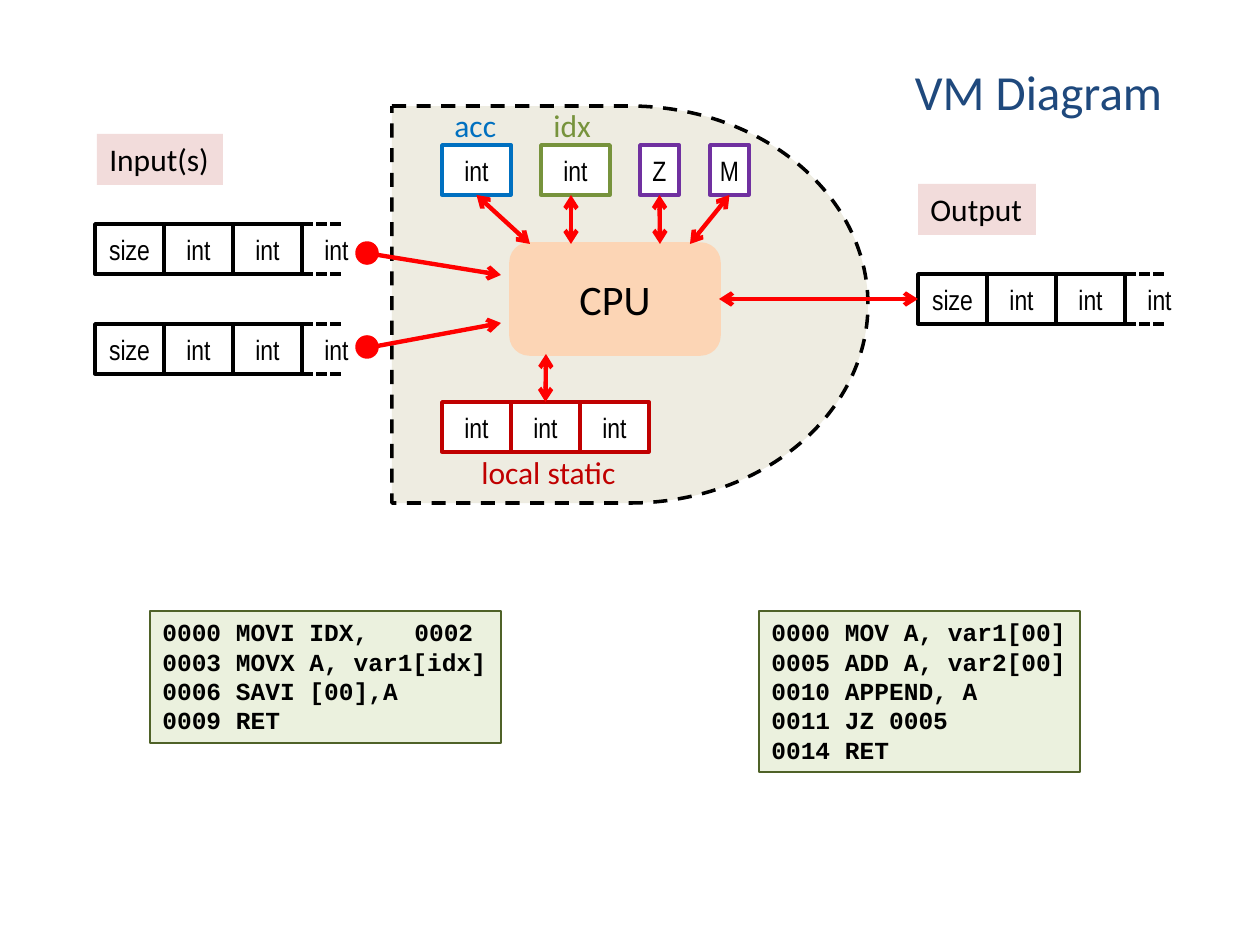
import pptx
import pptx.util
import pptx.dml.color
import pptx.enum.dml
import pptx.enum.shapes
import pptx.enum.text
import pptx.oxml
import pptx.oxml.ns

RGBColor = pptx.dml.color.RGBColor
SHAPE = pptx.enum.shapes.MSO_SHAPE
DASH = pptx.enum.dml.MSO_LINE
ALIGN = pptx.enum.text.PP_ALIGN
ANCHOR = pptx.enum.text.MSO_ANCHOR
AUTO_SIZE = pptx.enum.text.MSO_AUTO_SIZE

WHITE = RGBColor(0xFF, 0xFF, 0xFF)
BLACK = RGBColor(0x00, 0x00, 0x00)
NAVY = RGBColor(0x1F, 0x49, 0x7D)
TAN = RGBColor(0xEE, 0xEC, 0xE1)
PEACH = RGBColor(0xFC, 0xD5, 0xB5)
PINK = RGBColor(0xF2, 0xDC, 0xDB)
PALE_GREEN = RGBColor(0xEB, 0xF1, 0xDE)
DARK_GREEN = RGBColor(0x4F, 0x62, 0x28)
GREEN = RGBColor(0x77, 0x93, 0x3C)
BLUE = RGBColor(0x00, 0x70, 0xC0)
PURPLE = RGBColor(0x70, 0x30, 0xA0)
DARK_RED = RGBColor(0xC0, 0x00, 0x00)
RED = RGBColor(0xFF, 0x00, 0x00)

PX_PER_INCH = 126
CELL_W, CELL_H = 69, 50
BOTTOM, LEFT, RIGHT, TOP = 2, 1, 3, 0


def px(n):
    return pptx.util.Emu(round(n * 914400 / PX_PER_INCH))


class Diagram:
    """Style and current slide."""
    body_font, cell_font, code_font = "Calibri", "Arial Narrow", "Courier New"

    def __init__(self, slide):
        self.slide = slide

    def add_text(self, sp, lines, size, color=BLACK, font=body_font, bold=False,
                 align=ALIGN.LEFT, anchor=ANCHOR.TOP, grow=True):
        tf = sp.text_frame
        tf.word_wrap = False
        tf.auto_size = AUTO_SIZE.SHAPE_TO_FIT_TEXT if grow else AUTO_SIZE.NONE
        tf.vertical_anchor = anchor
        for i, line in enumerate(lines):
            p = tf.add_paragraph() if i else tf.paragraphs[0]
            p.alignment = align
            r = p.add_run()
            r.text = line
            r.font.name = font
            r.font.size = pptx.util.Pt(size)
            r.font.bold = bold
            r.font.color.rgb = color

    def title(self, x, y, w, h, text):
        sp = self.slide.shapes.title
        sp.left, sp.top, sp.width, sp.height = map(px, (x, y, w, h))
        self.add_text(sp, [text], 28, NAVY, align=ALIGN.CENTER)

    def shape(self, kind, x, y, w, h, fill, line=None, width=2, dash=None):
        sp = self.slide.shapes.add_shape(kind, px(x), px(y), px(w), px(h))
        sp.shadow.inherit = False
        sp.fill.solid()
        sp.fill.fore_color.rgb = fill
        if line is None:
            sp.line.fill.background()
        else:
            sp.line.color.rgb = line
            sp.line.width = pptx.util.Pt(width)
            if dash:
                sp.line.dash_style = dash
        return sp

    def cell(self, x, y, text, line=BLACK, w=CELL_W):
        sp = self.shape(SHAPE.RECTANGLE, x, y, w, CELL_H, WHITE, line)
        self.add_text(sp, [text], 16, font=self.cell_font, align=ALIGN.CENTER,
                      anchor=ANCHOR.MIDDLE, grow=False)
        return sp

    def row(self, x, y, texts, line=BLACK):
        return [self.cell(x + i * CELL_W, y, t, line) for i, t in enumerate(texts)]

    def open_array(self, x, y):
        """Three closed cells and a fourth that fades out in dashes."""
        end = x + 3 * CELL_W
        self.cell(end, y, "int", WHITE)
        cells = self.row(x, y, ["size", "int", "int"])
        for edge in (y, y + CELL_H):
            self.line(end, edge, end + 39, edge, BLACK, 2, dash=DASH.SQUARE_DOT)
        return cells

    def label(self, x, y, w, text, color):
        sp = self.slide.shapes.add_textbox(px(x), px(y), px(w), px(51))
        self.add_text(sp, [text], 18, color)

    def tag(self, x, y, w, text):
        sp = self.shape(SHAPE.RECTANGLE, x, y, w, 51, PINK)
        self.add_text(sp, [text], 18)

    def code(self, x, y, w, h, lines):
        sp = self.shape(SHAPE.RECTANGLE, x, y, w, h, PALE_GREEN, DARK_GREEN, 1)
        self.add_text(sp, lines, 14, font=self.code_font, bold=True)

    def line(self, x1, y1, x2, y2, color=RED, width=2.5, dash=None,
             arrows=(), begin=None, end=None):
        c = self.slide.shapes.add_connector(
            pptx.enum.shapes.MSO_CONNECTOR.STRAIGHT, px(x1), px(y1), px(x2), px(y2))
        c.line.color.rgb = color
        c.line.width = pptx.util.Pt(width)
        if dash:
            c.line.dash_style = dash
        spPr = c._element.spPr
        ln = spPr.find(pptx.oxml.ns.qn("a:ln"))
        for tag in arrows:
            ln.append(pptx.oxml.parse_xml(
                f'<a:{tag} {pptx.oxml.ns.nsdecls("a")} type="arrow"/>'))
        spPr.append(pptx.oxml.parse_xml(
            f'<a:effectLst {pptx.oxml.ns.nsdecls("a")}/>'))
        if begin:
            c.begin_connect(*begin)
        if end:
            c.end_connect(*end)

    def both_ways(self, x1, y1, x2, y2, begin=None, end=None):
        self.line(x1, y1, x2, y2, arrows=("headEnd", "tailEnd"), begin=begin, end=end)


def main():
    prs = pptx.Presentation()
    prs.slide_width, prs.slide_height = px(1260), px(945)
    d = Diagram(prs.slides.add_slide(prs.slide_layouts[5]))
    d.title(901, 55, 275, 72, "VM Diagram")

    # Machine outline
    d.shape(SHAPE.FLOWCHART_DELAY, 392, 106, 476, 397, TAN, BLACK, dash=DASH.DASH)

    # Input and output arrays
    for y in (224, 324):
        d.open_array(95, y)
    output = d.open_array(918, 274)
    d.tag(97, 134, 126, "Input(s)")
    d.tag(918, 184, 118, "Output")

    # Local static memory
    static = d.row(442, 402, ["int"] * 3, DARK_RED)
    d.label(469, 447, 161, "local static", DARK_RED)

    # Registers and flags
    acc = d.cell(442, 145, "int", BLUE)
    d.label(442, 100, 67, "acc", BLUE)
    d.cell(541, 145, "int", GREEN)
    d.label(541, 100, 63, "idx", GREEN)
    z_flag = d.cell(640, 145, "Z", PURPLE, 39)
    m_flag = d.cell(710, 145, "M", PURPLE, 39)

    # Processor
    cpu = d.shape(SHAPE.ROUNDED_RECTANGLE, 511, 244, 208, 110, PEACH, PEACH)
    d.add_text(cpu, ["CPU"], 24, align=ALIGN.CENTER, anchor=ANCHOR.MIDDLE, grow=False)

    # Data paths
    d.both_ways(719, 299, 918, 299, (cpu, RIGHT), (output[0], LEFT))
    d.both_ways(476, 195, 530, 244, begin=(acc, BOTTOM))
    d.both_ways(571, 195, 571, 244)
    d.both_ways(660, 195, 660, 244, begin=(z_flag, BOTTOM))
    d.both_ways(730, 195, 690, 244, begin=(m_flag, BOTTOM))
    d.both_ways(546, 354, 546, 402, end=(static[1], TOP))
    for y1, y2 in ((254, 275), (347, 323)):
        d.line(372, y1, 501, y2, arrows=("tailEnd",))

    # Programs
    d.code(150, 611, 351, 132, ["0000 MOVI IDX,\t0002", "0003 MOVX A, var1[idx]",
                                "0006 SAVI [00],A", "0009 RET"])
    d.code(759, 611, 321, 161, ["0000 MOV A, var1[00]", "0005 ADD A, var2[00]",
                                "0010 APPEND, A", "0011 JZ 0005", "0014 RET"])

    # Input ports
    for y in (243, 337):
        d.shape(SHAPE.OVAL, 357, y, 20, 20, RED, RED)

    prs.save("out.pptx")


if __name__ == "__main__":
    main()
